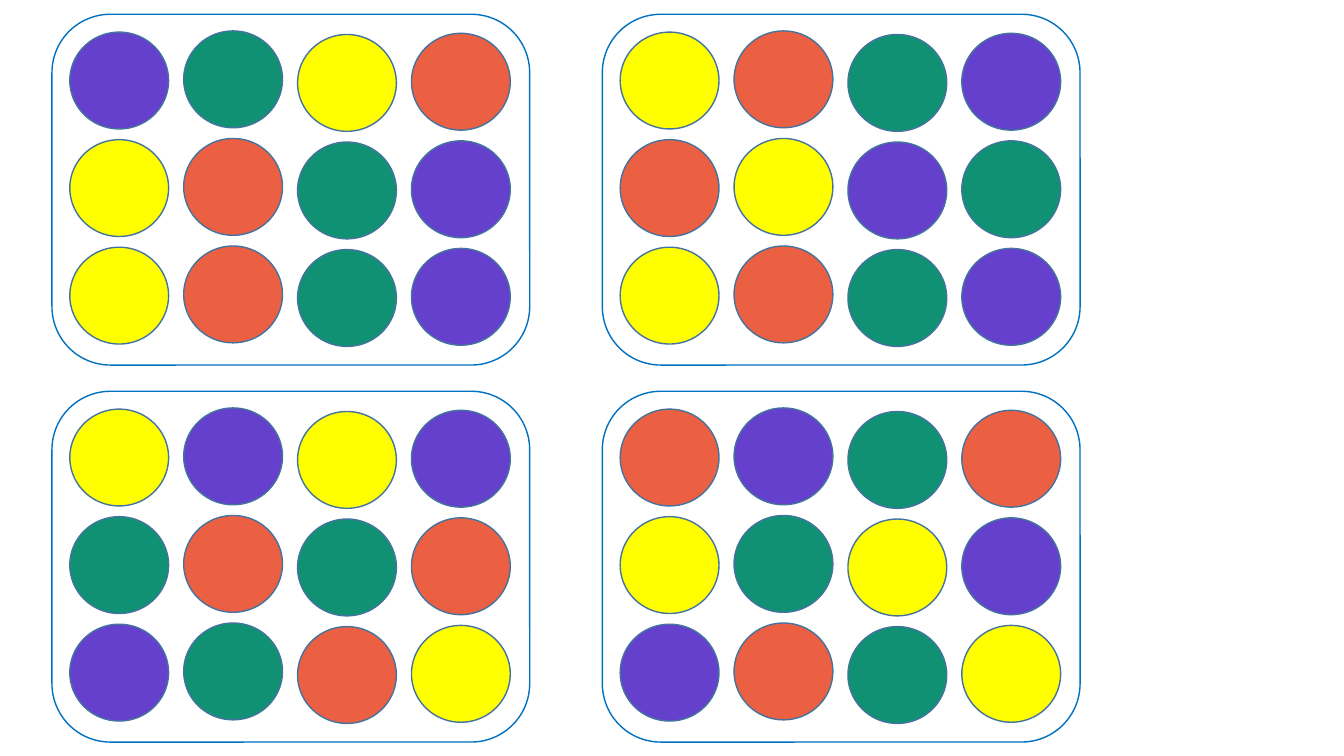
from dataclasses import dataclass

from pptx import Presentation
from pptx import util as u
from pptx.dml.color import RGBColor
from pptx.enum import shapes


@dataclass(frozen=True)
class Theme:
    purple: str = "6540CC"
    green: str = "119173"
    yellow: str = "FFFF00"
    red: str = "EB5F43"
    dot_line: str = "43739E"
    card_line: str = "0070C0"
    line_width: float = 1


theme = Theme()


def add_box(group, kind, left, top, width, height, line, fill=None):
    box = group.shapes.add_shape(kind, u.Cm(left), u.Cm(top), u.Cm(width), u.Cm(height))
    box.shadow.inherit = False
    if fill:
        box.fill.solid()
        box.fill.fore_color.rgb = RGBColor.from_string(fill)
    else:
        box.fill.background()
    box.line.color.rgb = RGBColor.from_string(line)
    box.line.width = u.Pt(theme.line_width)


deck = Presentation()
deck.slide_width = u.Cm(33.87)
deck.slide_height = u.Cm(19.05)
page = deck.slides.add_slide(deck.slide_layouts[6])

dot_colors = {"P": theme.purple, "G": theme.green, "Y": theme.yellow, "R": theme.red}
cards = [
    (0, 0, ["PGYR", "YRGP", "YRGP"]),
    (0, 1, ["YPYP", "GRGR", "PGRY"]),
    (1, 1, ["RPGR", "YGYP", "PRGY"]),
    (1, 0, ["YRGP", "RYPG", "YRGP"]),
]
card_left, card_top = 1.31, 0.36
card_width, card_height = 12.04, 8.84
card_step_x, card_step_y = 13.87, 9.5
dot_width, dot_height = 2.49, 2.44
dot_inset, dot_step_x, dot_step_y = 0.45, 2.87, 2.71
column_drops = [0.45, 0.42, 0.51, 0.48]

for card_column, card_row, dot_rows in cards:
    left = card_left + card_column * card_step_x
    top = card_top + card_row * card_step_y
    card = page.shapes.add_group_shape()
    for row, letters in enumerate(dot_rows):
        for column, letter in enumerate(letters):
            add_box(
                card,
                shapes.MSO_SHAPE.OVAL,
                left + dot_inset + column * dot_step_x,
                top + column_drops[column] + row * dot_step_y,
                dot_width,
                dot_height,
                line=theme.dot_line,
                fill=dot_colors[letter],
            )
    add_box(
        card,
        shapes.MSO_SHAPE.ROUNDED_RECTANGLE,
        left,
        top,
        card_width,
        card_height,
        line=theme.card_line,
    )

deck.save("out.pptx")
